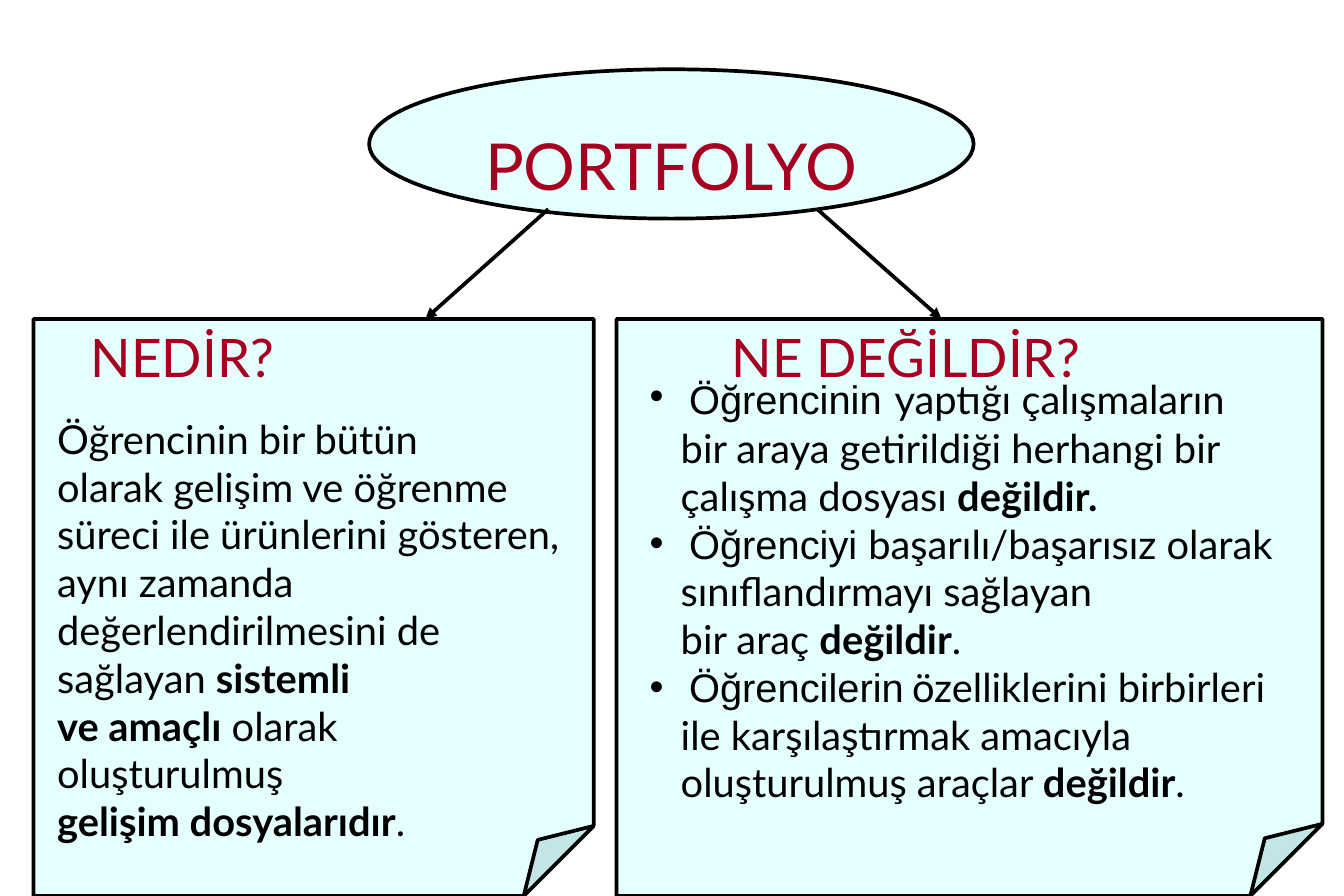
from lxml import etree
from pptx import Presentation
from pptx.dml.color import RGBColor
from pptx.enum import shapes, text
from pptx.oxml import ns
from pptx.util import Inches, Pt

RED, BLACK, AQUA = "A50021", "000000", "CCFFFF"
TITLE = "PORTFOLYO"
PANELS = [
    ("FOLDED_CORNER", (5.16, 2.67, 5.91, 4.83)),
    ("FOLDED_CORNER", (0.28, 2.67, 4.69, 4.83)),
    ("OVAL", (3.09, 0.58, 5.06, 1.25)),
]
HEADS = [
    ("NEDİR?", (0.66, 2.67, 2.62, 0.63), "LEFT"),
    ("NE DEĞİLDİR?", (5.62, 2.67, 3.93, 0.63), "CENTER"),
]
ARROWS = [(4.59, 1.75, 3.56, 2.67), (6.84, 1.75, 7.88, 2.67)]

PLAIN = ("Lato", 24, False)
BOLD = ("Lato", 24, True)
ARIAL = ("Arial", 24, False)
WIDE = ("Arial", 28, False)
SMALL = ("Arial", 18, False)

IS = [
    [("Öğrencinin bir bütün", PLAIN)],
    [("olarak gelişim ve öğrenme süreci ile ürünlerini gösteren, aynı zamanda", PLAIN)],
    [("değerlendirilmesini de sağlayan ", PLAIN), ("sistemli", BOLD)],
    [("ve amaçlı", BOLD), (" olarak", PLAIN)],
    [("oluşturulmuş", PLAIN)],
    [("gelişim dosyalarıdır", BOLD), (".", PLAIN)],
]
NOT = [
    [("Öğrencinin", ARIAL), (" ", WIDE), ("yaptığı çalışmaların", PLAIN)],
    [("bir araya getirildiği herhangi bir", PLAIN)],
    [("çalışma dosyası ", PLAIN), ("değildir.", BOLD)],
    [("Öğrenciyi ", ARIAL), ("başarılı/başarısız olarak", PLAIN)],
    [("sınıflandırmayı sağlayan", PLAIN)],
    [("bir araç ", PLAIN), ("değildir", BOLD), (".", PLAIN)],
    [("Öğrencilerin", ARIAL), (" ", SMALL), ("özelliklerini birbirleri", PLAIN)],
    [("ile karşılaştırmak amacıyla", PLAIN)],
    [("oluşturulmuş araçlar ", PLAIN), ("değildir", BOLD), (".", PLAIN)],
]


def color(code):
    return RGBColor.from_string(code)


def add(node, tag, **attrs):
    return etree.SubElement(node, ns.qn(tag), **attrs)


def style(font, face, size, bold, code):
    font.name, font.size, font.bold = face, Pt(size), bold
    font.color.rgb = color(code)


def outline(line):
    line.color.rgb = color(BLACK)
    line.width = Pt(2.25)


def panel(slide, kind, spot):
    shape = slide.shapes.add_shape(shapes.MSO_SHAPE[kind], *map(Inches, spot))
    shape.shadow.inherit = False
    shape.fill.solid()
    shape.fill.fore_color.rgb = color(AQUA)
    tint = shape._element.spPr.find(".//" + ns.qn("a:srgbClr"))
    add(tint, "a:alpha", val="50000")
    outline(shape.line)
    if kind == "FOLDED_CORNER":
        guides = shape._element.spPr.find(".//" + ns.qn("a:avLst"))
        add(guides, "a:gd", name="adj", fmla="val 12500")


def box(slide, spot):
    frame = slide.shapes.add_textbox(*map(Inches, spot)).text_frame
    frame.word_wrap = True
    return frame


def head(frame, words, size, align):
    frame.text = words
    para = frame.paragraphs[0]
    para.alignment = text.PP_ALIGN[align]
    style(para.runs[0].font, "Lato", size, False, RED)


def indent(para, left, bullet):
    props = para._p.get_or_add_pPr()
    props.set("marL", str(Inches(left)))
    props.set("indent", str(-Inches(left) if bullet else 0))
    if bullet:
        add(props, "a:buFont", typeface="Arial")
        add(props, "a:buChar", char="•")


def body(frame, lines, group=0):
    for i, line in enumerate(lines):
        para = frame.add_paragraph() if i else frame.paragraphs[0]
        if group:
            first = i % group == 0
            indent(para, 0.33 if first else 0.26, first)
        for words, look in line:
            run = para.add_run()
            run.text = words
            style(run.font, *look, BLACK)


def arrow(slide, ends):
    link = slide.shapes.add_connector(
        shapes.MSO_CONNECTOR.STRAIGHT, *map(Inches, ends))
    outline(link.line)
    add(link._element.spPr.find(ns.qn("a:ln")), "a:tailEnd", type="triangle")
    add(link._element.spPr, "a:effectLst")


def main():
    deck = Presentation()
    deck.slide_width, deck.slide_height = Inches(11.25), Inches(7.5)
    slide = deck.slides.add_slide(deck.slide_layouts[5])
    for kind, spot in PANELS:
        panel(slide, kind, spot)

    title = slide.shapes.title
    title.left, title.top, title.width, title.height = map(
        Inches, (0.84, 0.5, 9.56, 1.25))
    title.text_frame.vertical_anchor = text.MSO_ANCHOR.BOTTOM
    head(title.text_frame, TITLE, 39, "CENTER")
    slide.shapes._spTree.append(title._element)

    for words, spot, align in HEADS:
        head(box(slide, spot), words, 32, align)
    body(box(slide, (0.38, 3.42, 4.69, 3.69)), IS)
    body(box(slide, (5.34, 3.03, 5.8, 4.16)), NOT, 3)
    for ends in ARROWS:
        arrow(slide, ends)
    deck.save("out.pptx")


if __name__ == "__main__":
    main()
